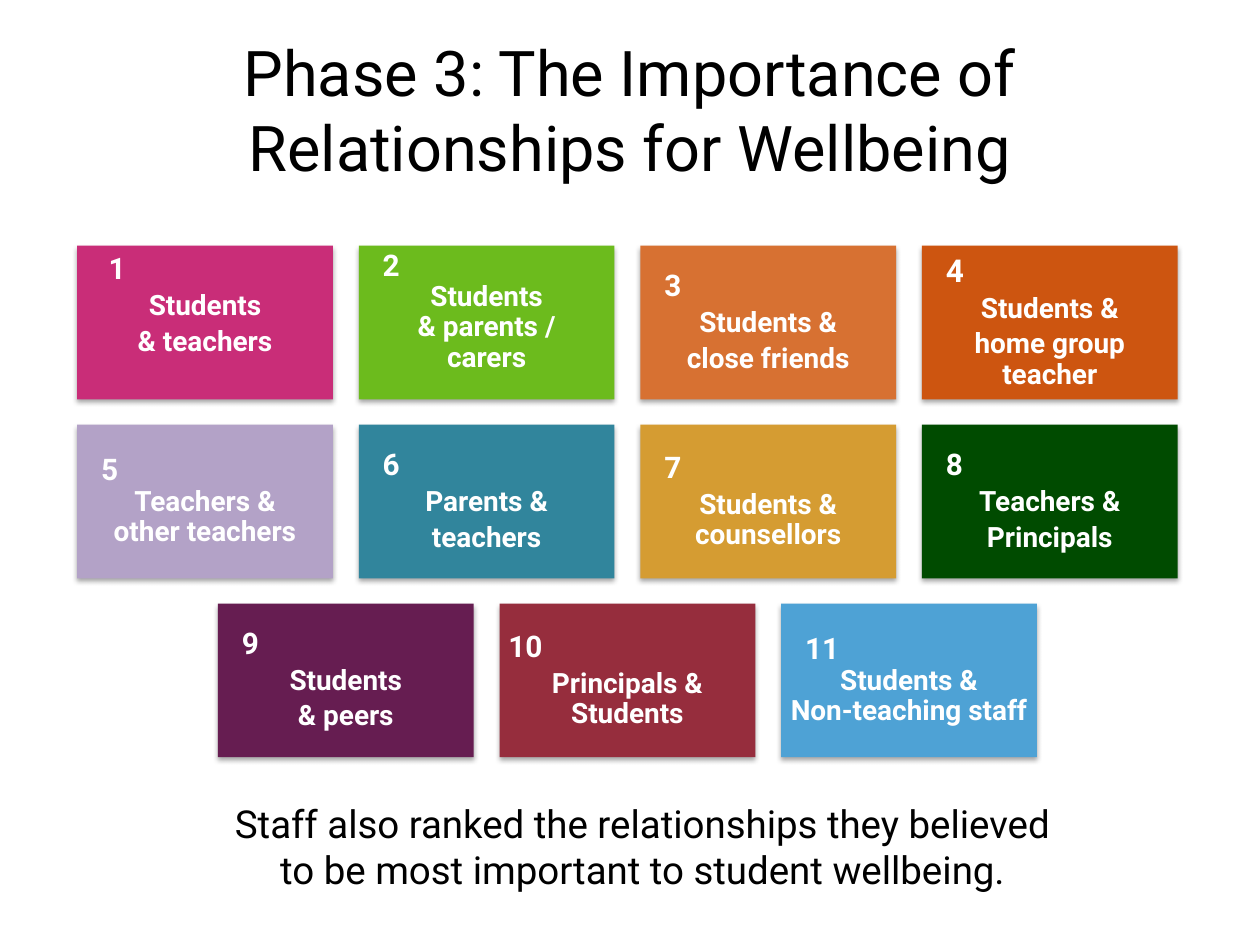
from dataclasses import dataclass

from lxml.etree import SubElement
from pptx import Presentation
from pptx.dml.color import RGBColor
from pptx.enum.shapes import MSO_SHAPE
from pptx.enum.text import MSO_ANCHOR, PP_ALIGN
from pptx.oxml.ns import qn
from pptx.util import Inches, Pt


@dataclass(frozen=True)
class Theme:
    font: str = "Roboto"
    dark: str = "000000"
    light: str = "FFFFFF"
    title_size: int = 36
    caption_size: int = 22
    number_size: int = 17
    label_size: int = 16


@dataclass(frozen=True)
class Card:
    number: str
    lines: tuple
    color: str
    gap: int = 3
    indent: float = 0.12
    lift: float = 0
    number_size: int = Theme.number_size


THEME = Theme()
PAGE_WIDTH, PAGE_HEIGHT = 10, 7.5
CARD_WIDTH, CARD_HEIGHT, CARD_INSET = 2.03, 1.22, 0.07
COLUMN_PITCH, ROW_PITCH = 2.235, 1.42
GRID_CENTER, GRID_TOP = 4.98, 1.95

CARD_ROWS = (
    (
        Card("1", ("Students", "& teachers"), "C92D78", indent=0.18, lift=0.27),
        Card("2", ("Students", "& parents /", "carers"), "6CBB1D", gap=0, lift=0.17),
        Card("3", ("Students &", "close friends"), "D77132"),
        Card("4", ("Students &", "home group teacher"), "CD5510", number_size=18),
    ),
    (
        Card("5", ("Teachers &", "other teachers"), "B3A2C7", gap=0),
        Card("6", ("Parents &", "teachers"), "31859C"),
        Card("7", ("Students & counsellors",), "D59C32"),
        Card("8", ("Teachers &", "Principals"), "004B00"),
    ),
    (
        Card("9", ("Students", "& peers"), "661D51"),
        Card("10", ("Principals & Students",), "962D3D", indent=0),
        Card("11", ("Students &", "Non-teaching staff"), "4EA2D5", gap=0),
    ),
)


def write_para(para, text, size, color, align=PP_ALIGN.CENTER, bold=False,
               spacing=None, gap=None, indent=0):
    para.alignment = align
    para.line_spacing = spacing
    para.space_after = None if gap is None else Pt(gap)
    if indent:
        para._p.get_or_add_pPr().set("marL", str(Inches(indent)))
    span = para.add_run()
    span.text = text
    span.font.name = THEME.font
    span.font.size = Pt(size)
    span.font.bold = bold
    span.font.color.rgb = RGBColor.from_string(color)


def add_text(page, text, left, top, width, height, size, anchor=MSO_ANCHOR.TOP):
    box = page.shapes.add_textbox(
        Inches(left * PAGE_WIDTH), Inches(top * PAGE_HEIGHT),
        Inches(width * PAGE_WIDTH), Inches(height * PAGE_HEIGHT))
    frame = box.text_frame
    frame.word_wrap = True
    frame.vertical_anchor = anchor
    write_para(frame.paragraphs[0], text, size, THEME.dark)


def add_shadow(shape, blur=3.1, distance=1.8, opacity=35):
    shape.shadow.inherit = False
    effects = shape._element.spPr.find(qn("a:effectLst"))
    shadow = SubElement(effects, qn("a:outerShdw"), blurRad=str(Pt(blur)),
                        dist=str(Pt(distance)), dir=str(90 * 60000), rotWithShape="0")
    color = SubElement(shadow, qn("a:srgbClr"), val=THEME.dark)
    SubElement(color, qn("a:alpha"), val=str(opacity * 1000))


def add_card(page, card, left, top):
    shape = page.shapes.add_shape(
        MSO_SHAPE.RECTANGLE, Inches(left), Inches(top),
        Inches(CARD_WIDTH), Inches(CARD_HEIGHT))
    shape.fill.solid()
    shape.fill.fore_color.rgb = RGBColor.from_string(card.color)
    shape.line.fill.background()
    add_shadow(shape)

    frame = shape.text_frame
    frame.word_wrap = True
    frame.vertical_anchor = MSO_ANCHOR.MIDDLE
    frame.margin_left = frame.margin_right = Inches(CARD_INSET)
    frame.margin_top = 0
    frame.margin_bottom = Inches(card.lift)
    style = dict(color=THEME.light, bold=True, spacing=0.9, gap=card.gap)
    write_para(frame.paragraphs[0], card.number, card.number_size,
               align=PP_ALIGN.LEFT, indent=card.indent, **style)
    for line in card.lines:
        write_para(frame.add_paragraph(), line, THEME.label_size, **style)


def add_card_grid(page):
    for row, cards in enumerate(CARD_ROWS):
        row_width = (len(cards) - 1) * COLUMN_PITCH + CARD_WIDTH
        row_left = GRID_CENTER - row_width / 2
        for column, card in enumerate(cards):
            add_card(page, card, row_left + column * COLUMN_PITCH,
                     GRID_TOP + row * ROW_PITCH)


def main():
    deck = Presentation()
    deck.slide_width = Inches(PAGE_WIDTH)
    deck.slide_height = Inches(PAGE_HEIGHT)
    page = deck.slides.add_slide(deck.slide_layouts[6])
    add_text(page, "Phase 3: The Importance of Relationships for Wellbeing",
             0.05, 0.03, 0.9, 0.17, THEME.title_size, anchor=MSO_ANCHOR.MIDDLE)
    add_card_grid(page)
    add_text(page, "Staff also ranked the relationships they believed "
             "to be most important to student wellbeing.",
             0.17, 0.84, 0.68, 0.11, THEME.caption_size)
    deck.save("out.pptx")


if __name__ == "__main__":
    main()
